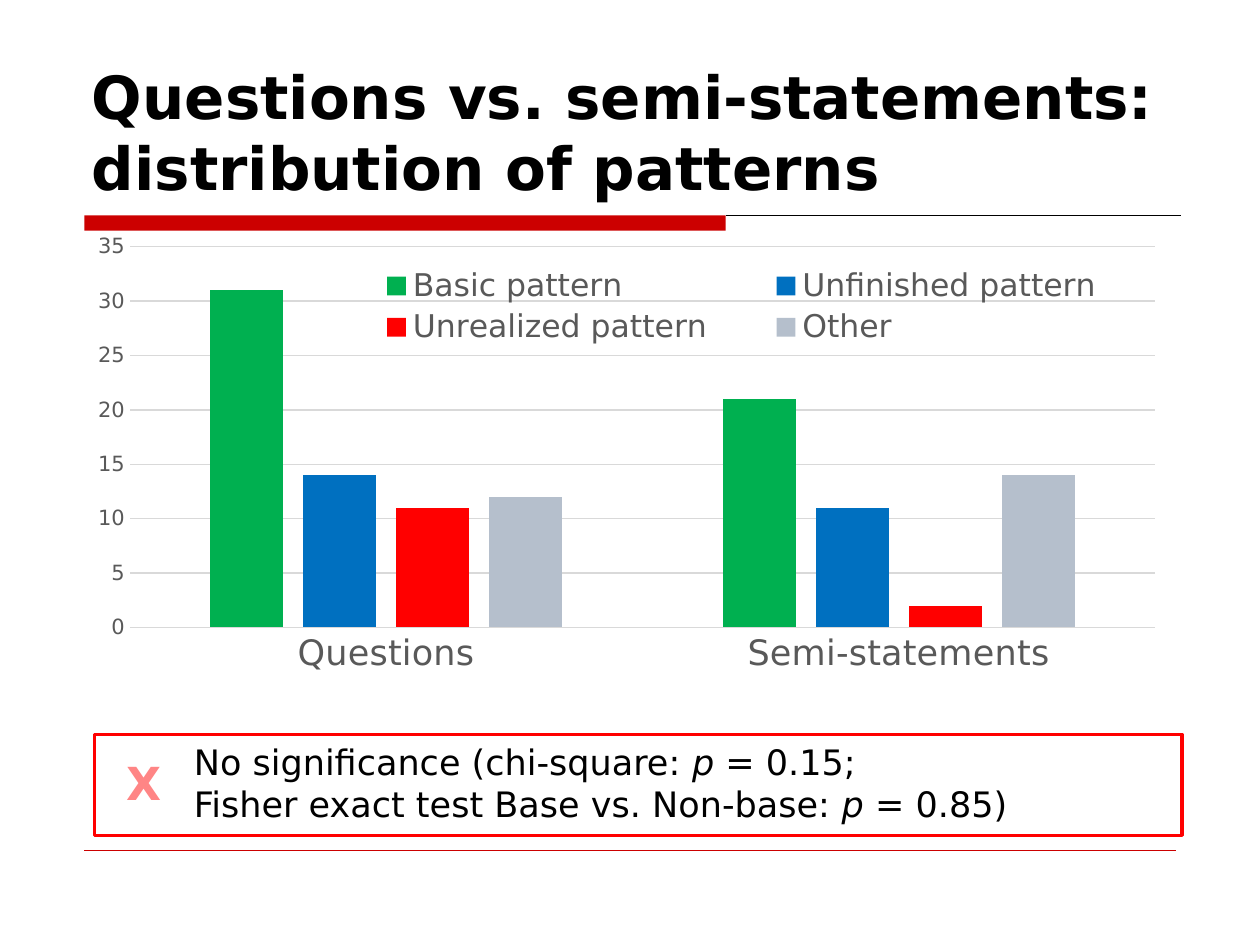
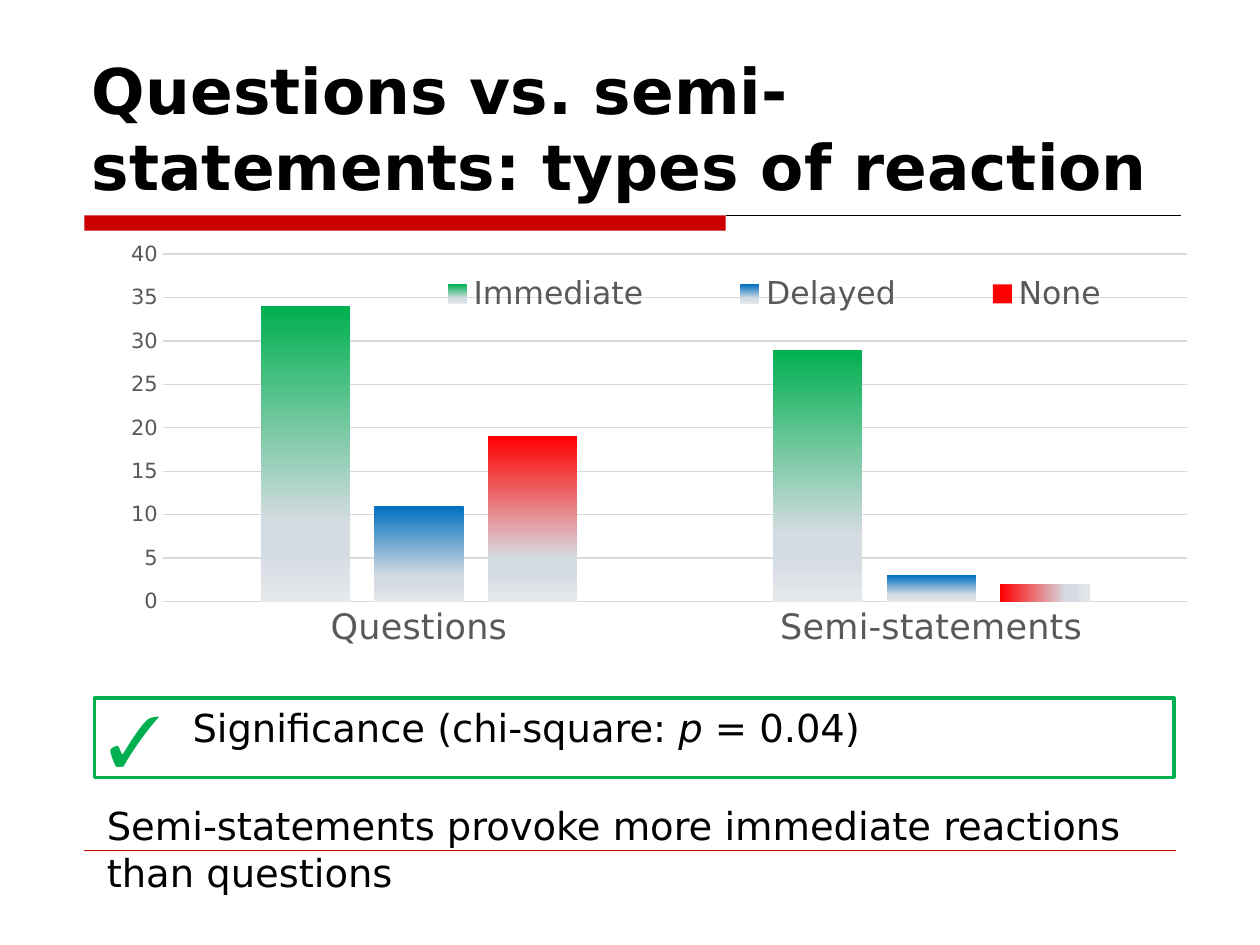
from dataclasses import dataclass
from typing import NamedTuple

from lxml.etree import SubElement as Sub
from pptx import Presentation
from pptx.chart.data import CategoryChartData as ChartData
from pptx.dml.color import RGBColor as Rgb
from pptx.enum.chart import XL_CHART_TYPE as Kind, XL_LEGEND_POSITION as Side
from pptx.enum.chart import XL_TICK_MARK as Tick
from pptx.enum.shapes import MSO_CONNECTOR as Wire, MSO_SHAPE as Form
from pptx.enum.text import MSO_ANCHOR as Anchor, MSO_AUTO_SIZE as Fit, PP_ALIGN as Align
from pptx.oxml.ns import qn
from pptx.util import Inches, Pt

HUES = {
    "ink": "000000", "band": "CC0000", "grey": "595959", "grid": "D9D9D9",
    "green": "00B050", "blue": "0070C0", "red": "FF0000", "slate": "B5BFCC",
    "mist": "D6DCE3", "pale": "E3E8EC", "pink": "FF8585",
}
FONT = "DejaVu Sans"
WIDE, HIGH = Inches(10), Inches(7.5)
COLS, ROWS = 100, 75  # grid cells across and down the slide
CATS = ("Questions", "Semi-statements")


class Area(NamedTuple):
    """Place on the grid: column, row, columns wide, rows high."""
    x: float
    y: float
    w: float
    h: float

    def emu(self) -> tuple[int, ...]:
        col, row = WIDE / COLS, HIGH / ROWS
        return tuple(round(n * u) for n, u in zip(self, (col, row, col, row)))


class Span(NamedTuple):
    text: str
    slant: bool = False


class Bars(NamedTuple):
    name: str
    vals: tuple[int, ...]
    hue: str


@dataclass
class Graph:
    area: Area
    top: int
    plot: Area  # shares of the chart
    key: Area  # shares of the chart
    bars: tuple[Bars, ...]
    fade: bool = False


@dataclass
class Note:
    area: Area
    spans: tuple[Span, ...]
    size: int
    hue: str = "ink"
    font: str = FONT
    bold: bool = False
    mid: bool = False
    edge: str = ""  # hue of the frame, if any
    left: float = 0  # left indent in inches


@dataclass
class Page:
    title: str
    size: int
    graph: Graph
    notes: tuple[Note, ...]


def rgb(hue: str) -> Rgb:
    return Rgb.from_string(HUES[hue])


def style(font, size: float, hue: str, name: str = FONT) -> None:
    font.size, font.name = Pt(size), name
    font.color.rgb = rgb(hue)


# Shared frame of every slide
def add_rule(slide, x: float, end: float, y: float, hue: str, wide: float) -> None:
    left, top, span, _ = Area(x, y, end - x, 0).emu()
    rule = slide.shapes.add_connector(Wire.STRAIGHT, left, top, left + span, top)
    rule.line.color.rgb, rule.line.width = rgb(hue), Pt(wide)
    Sub(rule._element.spPr, qn("a:effectLst"))


def add_frame(slide) -> None:
    add_rule(slide, 57.6, 93.7, 17.1, "ink", 0.75)
    band = slide.shapes.add_shape(Form.RECTANGLE, *Area(6.7, 17.1, 50.9, 1.2).emu())
    band.shadow.inherit = False
    band.fill.solid()
    band.fill.fore_color.rgb = rgb("band")
    band.line.fill.background()
    add_rule(slide, 6.7, 93.3, 67.5, "band", 0.25)


def set_title(slide, text: str, size: int) -> None:
    box = slide.shapes.title
    box.left, box.top, box.width, box.height = Area(6.3, 3.3, 87.5, 13.3).emu()
    frame = box.text_frame
    frame.auto_size, frame.vertical_anchor = Fit.NONE, Anchor.BOTTOM
    para = frame.paragraphs[0]
    para.alignment = Align.LEFT
    run = para.add_run()
    run.text = text
    style(run.font, size, "ink")
    run.font.bold = True


# Charts
def set_place(node, index: int, share: Area, inner: bool = False) -> None:
    for old in node.findall(qn("c:layout")):
        node.remove(old)
    lay = Sub(node, qn("c:layout"))
    node.insert(index, lay)
    man = Sub(lay, qn("c:manualLayout"))
    marks = [("layoutTarget", "inner")] if inner else []
    marks += [("xMode", "edge"), ("yMode", "edge")]
    marks += [(tag, str(val)) for tag, val in zip("xywh", share)]
    for tag, val in marks:
        Sub(man, qn(f"c:{tag}"), val=val)


def set_fade(fill, hue: str, turn: int) -> None:
    fill.gradient()
    fill.gradient_angle = turn
    stops = fill.gradient_stops[0]._gs.getparent()
    for old in list(stops):
        stops.remove(old)
    for pos, name in ((0, hue), (74, "mist"), (83, "mist"), (100, "pale")):
        stop = Sub(stops, qn("a:gs"), pos=str(pos * 1000))
        Sub(stop, qn("a:srgbClr"), val=HUES[name])


def paint_bars(series, hue: str, fade: bool) -> None:
    series.invert_if_negative = False
    fill = series.format.fill
    if fade and hue != "red":
        set_fade(fill, hue, 270)
        return
    fill.solid()
    fill.fore_color.rgb = rgb(hue)
    if fade:  # solid in the legend, faded in each column
        for i, turn in enumerate((270, 0)):
            set_fade(series.points[i].format.fill, hue, turn)


def add_graph(slide, graph: Graph) -> None:
    data = ChartData()
    data.categories = CATS
    for bar in graph.bars:
        data.add_series(bar.name, bar.vals)
    chart = slide.shapes.add_chart(
        Kind.COLUMN_CLUSTERED, *graph.area.emu(), data).chart
    chart.has_title = False
    style(chart.font, 10, "ink")
    plot = chart.plots[0]
    plot.gap_width, plot.overlap, plot.vary_by_categories = 219, -27, False
    for series, bar in zip(plot.series, graph.bars):
        paint_bars(series, bar.hue, graph.fade)
    # Axes
    cat, val = chart.category_axis, chart.value_axis
    for axis, size in ((cat, 20), (val, 12)):
        axis.major_tick_mark = axis.minor_tick_mark = Tick.NONE
        style(axis.tick_labels.font, size, "grey")
    val.minimum_scale, val.maximum_scale, val.major_unit = 0, graph.top, 5
    val.format.line.fill.background()
    for line in (cat.format.line, val.major_gridlines.format.line):
        line.color.rgb, line.width = rgb("grid"), Pt(0.75)
    # Legend and plot place
    chart.has_legend = True
    key = chart.legend
    key.position, key.include_in_layout = Side.BOTTOM, False
    style(key.font, 18, "grey")
    set_place(key._element, 1, graph.key)
    set_place(chart._chartSpace.chart.plotArea, 0, graph.plot, True)


# Text and framed notes
def add_note(slide, note: Note) -> None:
    if note.edge:
        box = slide.shapes.add_shape(Form.RECTANGLE, *note.area.emu())
        box.shadow.inherit = False
        box.fill.background()
        box.line.color.rgb, box.line.width = rgb(note.edge), Pt(2)
    else:
        box = slide.shapes.add_textbox(*note.area.emu())
    frame = box.text_frame
    frame.word_wrap, frame.vertical_anchor = True, Anchor.TOP
    para = frame.paragraphs[0]
    para.alignment = Align.CENTER if note.mid else Align.LEFT
    if note.left:
        props = para._p.get_or_add_pPr()
        props.set("marL", str(Inches(note.left)))
        props.set("indent", "0")
    for span in note.spans:
        if span.text == "\n":
            para.add_line_break()
            continue
        run = para.add_run()
        run.text = span.text
        style(run.font, note.size, note.hue, note.font)
        run.font.bold, run.font.italic = note.bold, span.slant


BREAK = Span("\n")
PAGES = (
    Page(
        "Questions vs. semi-statements: distribution of patterns", 34,
        Graph(Area(6.8, 18.6, 87.5, 43.3), 35,
              Area(0.04, 0.02, 0.93, 0.7), Area(0.22, 0.05, 0.75, 0.16),
              (Bars("Basic pattern", (31, 21), "green"),
               Bars("Unfinished pattern", (14, 11), "blue"),
               Bars("Unrealized pattern", (11, 2), "red"),
               Bars("Other", (12, 14), "slate"))),
        (Note(Area(7.5, 58.3, 86.3, 8),
              (Span("No significance (chi-square: "), Span("p ", True),
               Span("= 0.15;"), BREAK,
               Span("Fisher exact test Base vs. Non-base: "),
               Span("p = ", True), Span("0.85)")),
              20, edge="red", left=0.69),
         Note(Area(7.5, 59.4, 7.8, 5), (Span("X"),), 26, "pink",
              bold=True, mid=True)),
    ),
    Page(
        "Questions vs. semi-statements: types of reaction", 36,
        Graph(Area(6.8, 18.6, 87.5, 39.4), 40,
              Area(0.07, 0.04, 0.93, 0.7), Area(0.25, 0.07, 0.75, 0.1),
              (Bars("Immediate", (34, 29), "green"),
               Bars("Delayed", (11, 3), "blue"),
               Bars("None", (19, 2), "red")), fade=True),
        (Note(Area(6.8, 54.8, 7.8, 7.7), (Span("✓"),), 40, "green",
              "Times New Roman", bold=True, mid=True),
         Note(Area(7.5, 55.4, 85.7, 6.3),
              (Span("Significance (chi-square: "), Span("p ", True),
               Span("= 0.04)")),
              22, edge="green", left=0.68),
         Note(Area(7.5, 63.2, 92, 8.6),
              (Span("Semi-statements provoke more immediate reactions"),
               BREAK, Span("than questions")), 22)),
    ),
)


def main() -> None:
    deck = Presentation()
    deck.slide_width, deck.slide_height = WIDE, HIGH
    for page in PAGES:
        slide = deck.slides.add_slide(deck.slide_layouts[5])
        add_frame(slide)
        add_graph(slide, page.graph)
        set_title(slide, page.title, page.size)
        for note in page.notes:
            add_note(slide, note)
    deck.save("out.pptx")


if __name__ == "__main__":
    main()
